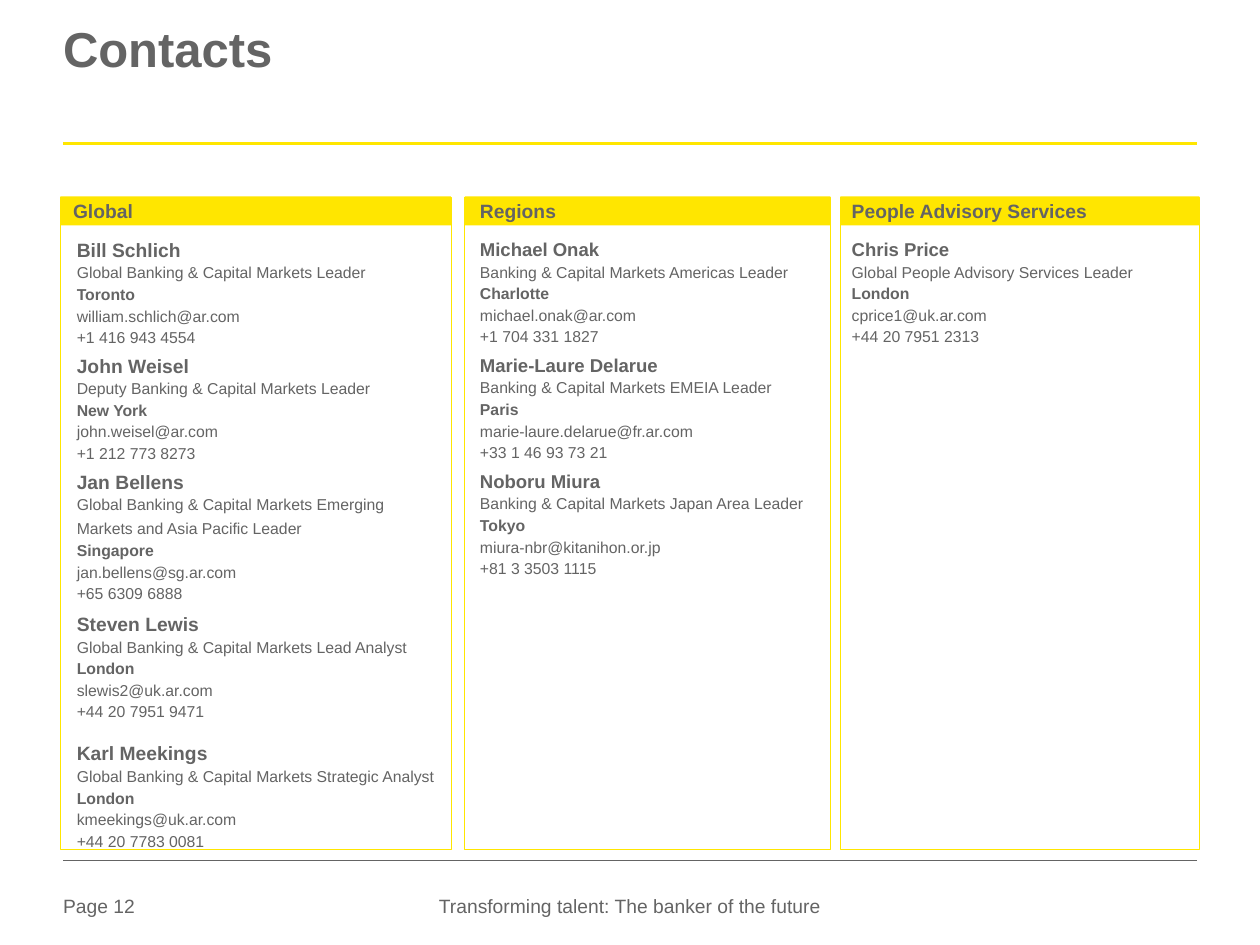
from dataclasses import dataclass

from lxml.etree import SubElement
from pptx import Presentation
from pptx.dml.color import RGBColor
from pptx.enum.shapes import MSO_CONNECTOR, MSO_SHAPE
from pptx.enum.text import MSO_ANCHOR, PP_ALIGN
from pptx.oxml.ns import qn
from pptx.util import Inches, Pt


@dataclass(frozen=True)
class Theme:
    font: str = "Arial"
    grey: RGBColor = RGBColor(0x64, 0x64, 0x64)
    yellow: RGBColor = RGBColor(0xFF, 0xE6, 0x00)
    title: float = 28
    heading: float = 11
    detail: float = 9
    footer: float = 11


THEME = Theme()
TITLE = "Contacts"
PAGE = "Page 12"
FOOTER = "Transforming talent: The banker of the future"

# Contact: name, role lines, city, e-mail, phone
COLUMNS = [
    dict(heading="Global", left=0.48, width=3.1, heading_left=0.58, text_left=0.61, name_size=11, blocks=[
        [("Bill Schlich", ["Global Banking & Capital Markets Leader"],
          "Toronto", "william.schlich@ar.com", "+1 416 943 4554")],
        [("John Weisel", ["Deputy Banking & Capital Markets Leader"],
          "New York", "john.weisel@ar.com", "+1 212 773 8273")],
        [("Jan Bellens", ["Global Banking & Capital Markets Emerging", "Markets and Asia Pacific Leader"],
          "Singapore", "jan.bellens@sg.ar.com", "+65 6309 6888")],
        [("Steven Lewis", ["Global Banking & Capital Markets Lead Analyst"],
          "London", "slewis2@uk.ar.com", "+44 20 7951 9471"),
         ("Karl Meekings", ["Global Banking & Capital Markets Strategic Analyst"],
          "London", "kmeekings@uk.ar.com", "+44 20 7783 0081")],
    ]),
    dict(heading="Regions", left=3.69, width=2.9, heading_left=3.81, text_left=3.81, name_size=10.6, blocks=[
        [("Michael Onak", ["Banking & Capital Markets Americas Leader"],
          "Charlotte", "michael.onak@ar.com", "+1 704 331 1827")],
        [("Marie-Laure Delarue", ["Banking & Capital Markets EMEIA Leader"],
          "Paris", "marie-laure.delarue@fr.ar.com", "+33 1 46 93 73 21")],
        [("Noboru Miura", ["Banking & Capital Markets Japan Area Leader"],
          "Tokyo", "miura-nbr@kitanihon.or.jp", "+81 3 3503 1115")],
    ]),
    dict(heading="People Advisory Services", left=6.67, width=2.85, heading_left=6.76, text_left=6.76,
         name_size=10.6, blocks=[
        [("Chris Price", ["Global People Advisory Services Leader"],
          "London", "cprice1@uk.ar.com", "+44 20 7951 2313")],
    ]),
]
BLOCK_TOPS = [1.89, 2.81, 3.73, 4.86]
LINE_HEIGHT = 0.168
CONTACT_GAP = 11.8


def style(paragraph, size, bold=False, before=0):
    paragraph.space_before = Pt(before)
    for run in paragraph.runs:
        run.font.name = THEME.font
        run.font.size = Pt(size)
        run.font.bold = bold
        run.font.color.rgb = THEME.grey


def clear_insets(frame):
    frame.margin_left = frame.margin_right = frame.margin_top = frame.margin_bottom = 0
    frame.vertical_anchor = MSO_ANCHOR.TOP
    frame.word_wrap = True


def add_text(slide, lines, left, top, width, height, align=PP_ALIGN.LEFT):
    frame = slide.shapes.add_textbox(Inches(left), Inches(top), Inches(width), Inches(height)).text_frame
    clear_insets(frame)
    frame.text = "\n".join(text for text, *_ in lines)
    for paragraph, (_, *look) in zip(frame.paragraphs, lines):
        paragraph.alignment = align
        style(paragraph, *look)


def add_box(slide, left, top, width, height, filled):
    box = slide.shapes.add_shape(MSO_SHAPE.RECTANGLE, Inches(left), Inches(top), Inches(width), Inches(height))
    box.shadow.inherit = False
    if filled:
        box.fill.solid()
        box.fill.fore_color.rgb = THEME.yellow
        box.line.fill.background()
    else:
        box.fill.background()
        box.line.color.rgb = THEME.yellow
        box.line.width = Pt(0.5)


def add_rule(slide, top, color, weight):
    rule = slide.shapes.add_connector(MSO_CONNECTOR.STRAIGHT, Inches(0.5), Inches(top), Inches(9.5), Inches(top))
    rule.line.color.rgb = color
    rule.line.width = Pt(weight)
    SubElement(rule._element.spPr, qn("a:effectLst"))


def contact_lines(contact, name_size, before):
    name, roles, city, email, phone = contact
    lines = [(name, name_size, True, before)]
    lines += [(role, THEME.detail, False, 3 if row else 1.1) for row, role in enumerate(roles)]
    lines += [(city, THEME.detail, True, 1.5)]
    return lines + [(text, THEME.detail, False, 1.5) for text in (email, phone)]


def add_column(slide, column):
    left, width = column["left"], column["width"]
    add_box(slide, left, 1.56, width, 0.23, filled=True)
    add_box(slide, left, 1.57, width, 5.17, filled=False)
    add_text(slide, [(column["heading"], THEME.heading, True)], column["heading_left"], 1.58, width - 0.5, 0.19)
    for top, contacts in zip(BLOCK_TOPS, column["blocks"]):
        lines = []
        for contact in contacts:
            lines += contact_lines(contact, column["name_size"], CONTACT_GAP if lines else 0)
        add_text(slide, lines, column["text_left"], top, width - 0.13, len(lines) * LINE_HEIGHT)


def main():
    deck = Presentation()
    deck.slide_width, deck.slide_height = Inches(10), Inches(7.5)
    slide = deck.slides.add_slide(deck.slide_layouts[5])

    title = slide.shapes.title
    title.left, title.top, title.width, title.height = Inches(0.5), Inches(0.22), Inches(9), Inches(0.94)
    clear_insets(title.text_frame)
    title.text_frame.text = TITLE
    heading = title.text_frame.paragraphs[0]
    heading.alignment = PP_ALIGN.LEFT
    heading.line_spacing = 0.85
    style(heading, THEME.title, True)

    add_rule(slide, 1.14, THEME.yellow, 1.5)
    add_rule(slide, 6.83, THEME.grey, 0.25)
    for column in COLUMNS:
        add_column(slide, column)
    add_text(slide, [(PAGE, THEME.footer)], 0.5, 7.1, 0.79, 0.22)
    add_text(slide, [(FOOTER, THEME.footer)], 3.45, 7.1, 3.1, 0.22, PP_ALIGN.CENTER)
    deck.save("out.pptx")


if __name__ == "__main__":
    main()
